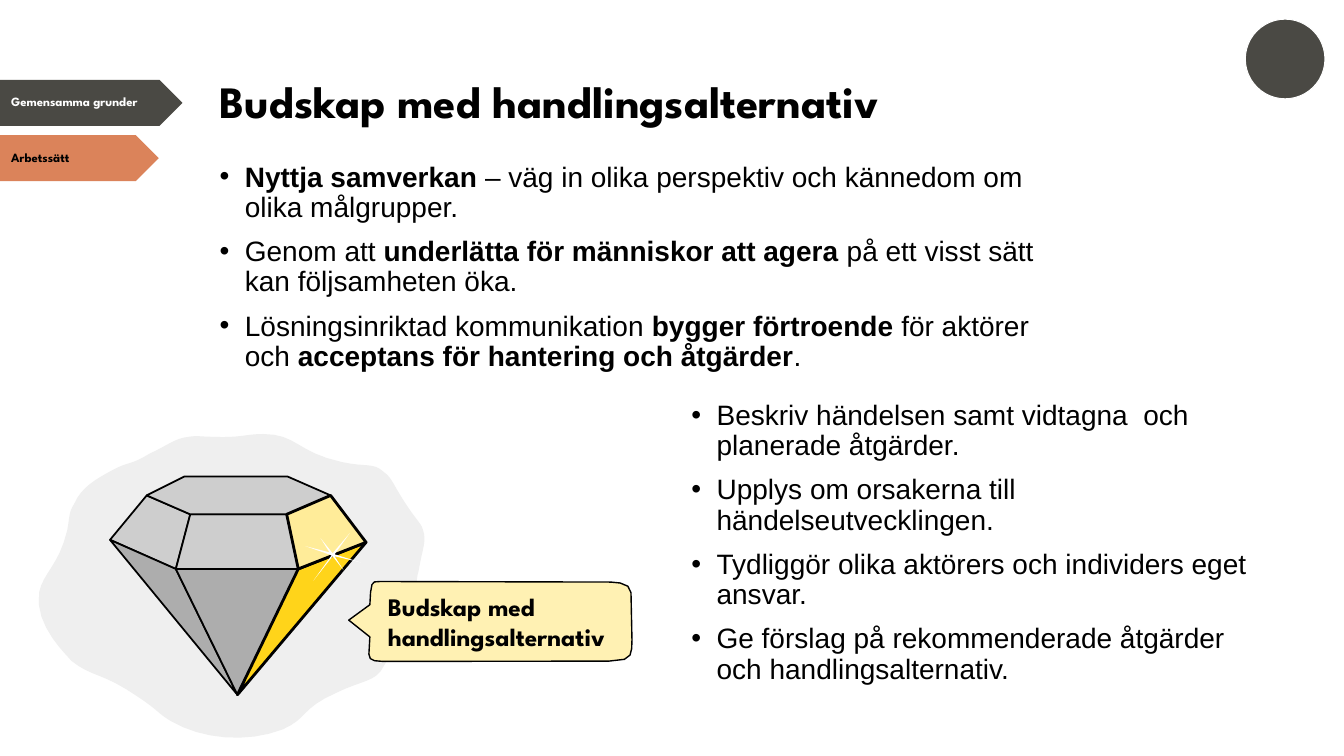
"""Build the slide on messages with options for action."""
from pptx import Presentation
from pptx.dml.color import RGBColor
from pptx.enum import shapes, text
from pptx.oxml import parse_xml
from pptx.oxml import ns
from pptx.util import Pt


class Theme:
    head, body = "League Spartan", "Arial"
    tag, label, copy, title = 9, 18, 20, 32
    black, white, dark, orange = "000000", "FFFFFF", "4A4944", "DB835A"
    mist, light, mid = "EFEFEF", "CECECE", "ADADAD"
    cream, pale, gold = "FFF1B3", "FFEC99", "FFD41A"


def paint(shape, fill, weight=0, edge=Theme.black):
    shape.shadow.inherit = False
    shape.fill.solid()
    shape.fill.fore_color.rgb = RGBColor.from_string(fill)
    if weight:
        shape.line.width = Pt(weight)
        shape.line.color.rgb = RGBColor.from_string(edge)
    else:
        shape.line.fill.background()


def write(shape, paras, face, size, color=Theme.black, space=0.9, bullet=False):
    frame = shape.text_frame
    frame.word_wrap = True
    for i, runs in enumerate(paras):
        para = frame.add_paragraph() if i else frame.paragraphs[0]
        para.alignment = text.PP_ALIGN.LEFT
        para.line_spacing = space
        if i:
            para.space_before = Pt(10)
        if bullet:
            props = para._p.get_or_add_pPr()
            props.set("marL", str(Pt(18)))
            props.set("indent", str(Pt(-18)))
            props.append(parse_xml(f'<a:buFont {ns.nsdecls("a")} typeface="Arial"/>'))
            props.append(parse_xml(f'<a:buChar {ns.nsdecls("a")} char="•"/>'))
        for words, bold in runs:
            run = para.add_run()
            run.text = words
            run.font.name, run.font.size, run.font.bold = face, Pt(size), bold
            run.font.color.rgb = RGBColor.from_string(color)


deck = Presentation()
deck.slide_width, deck.slide_height = Pt(960), Pt(540)
slide = deck.slides.add_slide(deck.slide_layouts[6])
items = slide.shapes

tags = [
    ("Gemensamma grunder", 57, 130.3, Theme.dark, Theme.white),
    ("Arbetssätt", 96.5, 113.4, Theme.orange, Theme.black),
]
for words, top, width, fill, color in tags:
    tag = items.add_shape(shapes.MSO_SHAPE.PENTAGON, 0, Pt(top), Pt(width), Pt(33))
    paint(tag, fill)
    tag.text_frame.margin_left = Pt(7.9)
    tag.text_frame.margin_right = 0
    tag.text_frame.vertical_anchor = text.MSO_ANCHOR.MIDDLE
    write(tag, [[(words, True)]], Theme.head, Theme.tag, color)

disc = items.add_shape(shapes.MSO_SHAPE.OVAL, Pt(889.5), Pt(13.7), Pt(56.9), Pt(56.9))
paint(disc, Theme.dark, 0.75, Theme.white)

curve = [
    (295, 433), (293, 440), (288, 444), (284, 449), (276, 460), (281, 466),
    (274, 476), (269, 487), (258, 486), (240, 495), (215, 506), (220, 513),
    (202, 521), (176, 531), (144, 528), (122, 515), (112, 509), (114, 508),
    (99, 498), (73, 480), (66, 484), (51, 472), (49, 469), (24, 447),
    (28, 423), (31, 409), (42, 404), (48, 379), (50, 369), (49, 366),
    (53, 360), (58, 348), (69, 342), (80, 336), (93, 329), (92, 333),
    (107, 324), (120, 318), (125, 313), (135, 312), (141, 311), (144, 312),
    (152, 312), (171, 313), (176, 310), (188, 310), (212, 310), (212, 323),
    (244, 330), (262, 334), (266, 330), (274, 337), (281, 342), (280, 346),
    (294, 366), (300, 374), (301, 375), (302, 378), (305, 387), (302, 390),
    (299, 408), (297, 414), (298, 420), (297, 426), (297, 428), (297, 431),
    (295, 433),
]
blob = []
for k in range(0, len(curve) - 1, 3):
    for step in range(8):
        t = step / 8
        mix = ((1 - t) ** 3, 3 * t * (1 - t) ** 2, 3 * t * t * (1 - t), t ** 3)
        blob.append([sum(m * p[axis] for m, p in zip(mix, curve[k:k + 4]))
                     for axis in (0, 1)])

bubble = [
    (271.4, 415.4), (267.5, 415.7), (265.7, 417.6), (264.7, 423), (264.2, 432),
    (249.1, 443), (264.2, 455), (263.5, 467.3), (264.5, 470.5), (267.5, 472),
    (273.6, 472.5), (434.9, 472.3), (446, 471), (450, 468), (451.2, 463.5),
    (451.4, 457.2), (450.7, 423.4), (448.5, 418.8), (443, 416.5), (436.3, 415.8),
]
spark = [
    (239, 397.4), (257.8, 401.8), (239, 396), (249.8, 380.9), (237.6, 395.3),
    (229, 384.5), (235.4, 394.6), (218.2, 390.2), (236.9, 396.7),
    (223.9, 414.7), (237.6, 397.4), (245.5, 407.5),
]
west, east, tip = (78.6, 385.6), (261.5, 387.4), (169.6, 496.3)
back, rear = (131.9, 340.3), (205.2, 340.3)
left, right = (104.8, 353.9), (236.2, 353.9)
inner, outer = (135.9, 367.4), (204.8, 367.4)
low, base = (125.6, 406.4), (213.1, 406.4)

forms = [
    (blob, Theme.mist, 0, None),
    (bubble, Theme.cream, 1, "Budskap med handlingsalternativ"),
    ([west, left, inner, low], Theme.light, 1.25, None),
    ([west, low, tip], Theme.mid, 1.25, None),
    ([low, base, tip], Theme.mid, 1.25, None),
    ([inner, outer, base, low], Theme.light, 1.25, None),
    ([back, rear, right, outer, inner, left], Theme.light, 1.25, None),
    ([tip, east, base], Theme.gold, 2, None),
    ([east, right, outer, base], Theme.pale, 2, None),
    (spark, Theme.white, 0, None),
]
for points, fill, weight, words in forms:
    first, *rest = [(Pt(x), Pt(y)) for x, y in points]
    pen = items.build_freeform(*first)
    pen.add_line_segments(rest, close=True)
    form = pen.convert_to_shape()
    paint(form, fill, weight)
    if words:
        form.text_frame.margin_left = Pt(28)
        form.text_frame.vertical_anchor = text.MSO_ANCHOR.MIDDLE
        write(form, [[(words, True)]], Theme.head, Theme.label, space=1.0)

title = items.add_textbox(Pt(149.8), Pt(53.3), Pt(744.5), Pt(42.5))
write(title, [[("Budskap med handlingsalternativ", True)]], Theme.head, Theme.title)

points = [
    [("Nyttja samverkan ", True),
     ("– väg in olika perspektiv och kännedom om olika målgrupper.", False)],
    [("Genom att ", False), ("underlätta för människor att agera ", True),
     ("på ett visst sätt kan följsamheten öka.", False)],
    [("Lösningsinriktad kommunikation ", False), ("bygger förtroende ", True),
     ("för aktörer och ", False),
     ("acceptans för hantering och åtgärder", True), (".", False)],
]
advice = [
    [("Beskriv händelsen samt vidtagna  och planerade åtgärder.", False)],
    [("Upplys om orsakerna till händelseutvecklingen.", False)],
    [("Tydliggör olika aktörers och individers eget ansvar.", False)],
    [("Ge förslag på rekommenderade åtgärder och handlingsalternativ.", False)],
]
for x, y, width, paras in [(149.8, 112.8, 622, points), (486.8, 283, 415.4, advice)]:
    box = items.add_textbox(Pt(x), Pt(y), Pt(width), Pt(342.7))
    write(box, paras, Theme.body, Theme.copy, bullet=True)

deck.save("out.pptx")
